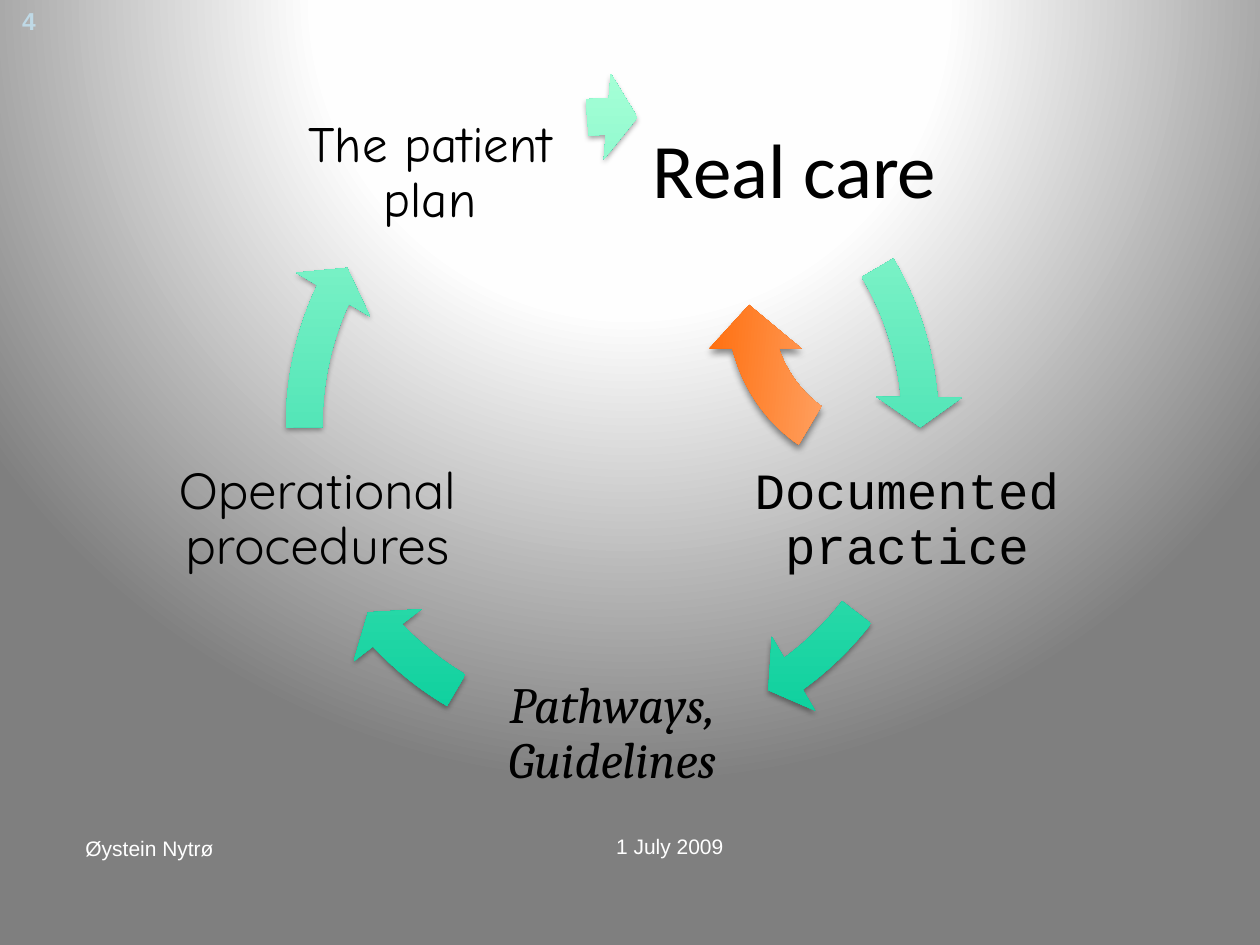
"""Build the care-cycle slide: five labels on a ring, joined by circular arrows."""
import math

import pptx
import pptx.dml.color
import pptx.enum.shapes
import pptx.enum.text
import pptx.oxml
import pptx.oxml.ns
import pptx.util
from pptx.util import Inches

CENTER_X, CENTER_Y, RADIUS = 4.86, 3.37, 2.46
LABEL_W, LABEL_H = 2.5, 1.48
RING = 5.57
ALIGN = pptx.enum.text.PP_ALIGN

# text, font, size, italic, inset, arrow end angle, arrow start angle
STAGES = [
    ("Real care", "Calibri", 44, False, 0.06, 212.93, 197.66),
    ("Documented practice", "Courier New", 29, False, 0.02, 32.39, 22.53),
    ("Pathways, Guidelines", "Cambria", 29, True, 0.04, 82.11, 72.26),
    ("Operational procedures", "Quicksand", 29, False, 0.04, 122.98, 107.71),
    ("The patient plan", "Comic Neue", 29, False, 0.04, 161.44, 159.2),
]


def rgb(color):
    """Return a colour object for a hex string."""
    return pptx.dml.color.RGBColor.from_string(color)


def set_background(s):
    """Fill the slide with a circular gradient, white at the top to grey."""
    s.background.fill.solid()
    stops = "".join(
        f'<a:gs pos="{pos * 1000}"><a:srgbClr val="{color}"/></a:gs>'
        for pos, color in [(0, "FFFFFF"), (40, "FEFEFE"), (100, "7F7F7F")])
    grad = pptx.oxml.parse_xml(
        f'<a:gradFill {pptx.oxml.ns.nsdecls("a")} rotWithShape="1">'
        f'<a:gsLst>{stops}</a:gsLst><a:path path="circle">'
        '<a:fillToRect l="50000" t="-80000" r="50000" b="180000"/>'
        '</a:path></a:gradFill>')
    solid = s.background._cSld.find(".//" + pptx.oxml.ns.qn("a:solidFill"))
    solid.getparent().replace(solid, grad)


def add_text(shapes, box, text, font, size, color, align=ALIGN.LEFT,
             bold=False, italic=False):
    """Add a wrapped one-run text box and return its text frame."""
    tf = shapes.add_textbox(*map(Inches, box)).text_frame
    tf.word_wrap = True
    p = tf.paragraphs[0]
    p.alignment = align
    r = p.add_run()
    r.text = text
    r.font.name = font
    r.font.size = pptx.util.Pt(size)
    r.font.bold = bold
    r.font.italic = italic
    r.font.color.rgb = rgb(color)
    return tf


def add_label(shapes, index, text, font, size, italic, inset):
    """Add a stage label at its corner of the regular pentagon."""
    angle = math.radians(-54 + 72 * index)
    left = CENTER_X + RADIUS * math.cos(angle) - LABEL_W / 2
    top = CENTER_Y + RADIUS * math.sin(angle) - LABEL_H / 2
    tf = add_text(shapes, (left, top, LABEL_W, LABEL_H), text, font, size,
                  "000000", ALIGN.CENTER, italic=italic)
    tf.vertical_anchor = pptx.enum.text.MSO_ANCHOR.MIDDLE
    tf.margin_left = tf.margin_right = Inches(inset)
    tf.margin_top = tf.margin_bottom = Inches(inset)
    tf.paragraphs[0].line_spacing = 0.9


def add_shadow(sp, alpha, blur, dist):
    """Give a shape a soft black shadow straight below it."""
    sp.shadow.inherit = False
    effects = sp._element.spPr.find(pptx.oxml.ns.qn("a:effectLst"))
    effects.append(pptx.oxml.parse_xml(
        f'<a:outerShdw {pptx.oxml.ns.nsdecls("a")} '
        f'blurRad="{pptx.util.Pt(blur)}" dist="{pptx.util.Pt(dist)}" '
        'dir="5400000" rotWithShape="0"><a:srgbClr val="000000">'
        f'<a:alpha val="{alpha * 1000}"/></a:srgbClr></a:outerShdw>'))


def add_arrow(shapes, box, adjustments, colors, angle, shadow, rotation=0):
    """Add a circular arrow with a two-colour gradient and a shadow."""
    sp = shapes.add_shape(pptx.enum.shapes.MSO_SHAPE.CIRCULAR_ARROW,
                          *map(Inches, box))
    for i, value in enumerate(adjustments):
        sp.adjustments[i] = value
    sp.rotation = rotation
    sp.fill.gradient()
    sp.fill.gradient_angle = angle
    for stop, position, color in zip(sp.fill.gradient_stops, (0, 1), colors):
        stop.position = position
        stop.color.rgb = rgb(color)
    sp.line.fill.background()
    add_shadow(sp, *shadow)


def add_cycle(s):
    """Add the group of five labels, each followed by its arrow."""
    shapes = s.shapes.add_group_shape().shapes
    ring = (CENTER_X - RING / 2, CENTER_Y - RING / 2, RING, RING)
    for i, (*label, end, start) in enumerate(STAGES):
        add_label(shapes, i, *label)
        add_arrow(shapes, ring, (0.052, 3.36, end, start, 0.061),
                  ("00CC99", "A5FFD6"), 90, (35, 3.1, 1.8))


def main():
    """Build and save the slide."""
    prs = pptx.Presentation()
    prs.slide_width, prs.slide_height = Inches(10), Inches(7.5)
    s = prs.slides.add_slide(prs.slide_layouts[6])
    set_background(s)
    add_text(s.shapes, (0, 0, 0.46, 0.42), "4", "Arial", 14, "BFD9E6",
             ALIGN.CENTER, bold=True)
    add_cycle(s)
    add_text(s.shapes, (3.92, 6.57, 1.92, 0.5), "1 July 2009", "Arial", 12,
             "FFFFFF", ALIGN.RIGHT)
    add_text(s.shapes, (0.58, 6.58, 3.17, 0.5), "Øystein Nytrø", "Arial", 12,
             "FFFFFF")
    add_arrow(s.shapes, (5.58, 0.92, 2.83, 3),
              (0.125, 11.42, 204.58, 180.39, 0.129),
              ("FF6600", "FFFFFF"), 175, (43, 4, 3), rotation=180)
    prs.save("out.pptx")


if __name__ == "__main__":
    main()
